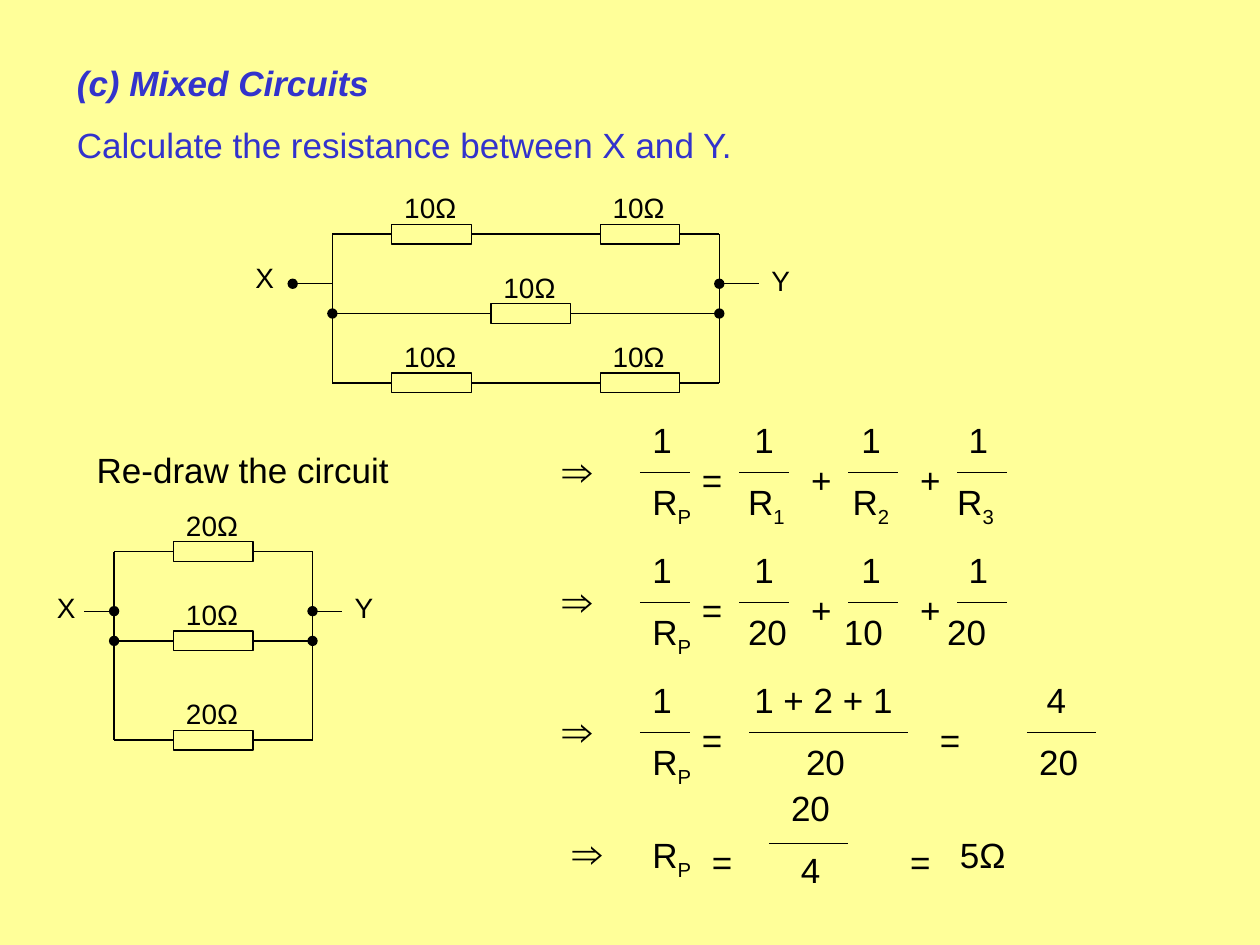
from pptx import Presentation
from pptx.dml.color import RGBColor
from pptx.enum.shapes import MSO_CONNECTOR, MSO_SHAPE
from pptx.enum.text import PP_ALIGN
from pptx.oxml.ns import qn
from pptx.util import Inches, Mm, Pt
from lxml import etree

BOX = MSO_SHAPE.RECTANGLE
LINE = MSO_CONNECTOR.STRAIGHT
MID = PP_ALIGN.CENTER
BLACK = RGBColor(0x00, 0x00, 0x00)
BLUE = RGBColor(0x33, 0x33, 0xCC)
CREAM = RGBColor(0xFF, 0xFF, 0x99)
CELL = Mm(2)
FONT = "Arial"
WIDE = 8


def col(n):
    return int((n + 0.5) * CELL)


def row(n):
    return int((n + 0.6) * CELL)


def add_run(para, text, size, color):
    run = para.add_run()
    run.text = text.lstrip("_")
    run.font.name = FONT
    run.font.size = Pt(size)
    run.font.color.rgb = color
    if text.startswith("_"):
        run._r.get_or_add_rPr().set("baseline", "-25000")
    return run


def add_tabs(para, stops):
    tabs = etree.SubElement(para._p.get_or_add_pPr(), qn("a:tabLst"))
    for stop in stops:
        etree.SubElement(tabs, qn("a:tab"), pos=str(Inches(stop)), algn="l")


def add_text(slide, x, y, width, lines, size=20, color=BLACK, align=None):
    high = 5.5 if len(lines) == 1 else 11.8
    box = slide.shapes.add_textbox(col(x), row(y), int(width * CELL), int(high * CELL))
    frame = box.text_frame
    frame.word_wrap = True
    for i, runs in enumerate(lines):
        para = frame.paragraphs[0] if i == 0 else frame.add_paragraph()
        para.alignment = align
        if i:
            para.space_before = Pt(11.3)
        for text in runs:
            add_run(para, text, size, color)
    return frame


def add_wire(slide, x1, y1, x2, y2, start=None, end=None, dot=None):
    wire = slide.shapes.add_connector(LINE, col(x1), row(y1), col(x2), row(y2))
    if start is not None:
        wire.begin_connect(start, 3)
    if end is not None:
        wire.end_connect(end, 1)
    wire.line.color.rgb = BLACK
    wire.line.width = Pt(0.75)
    if dot:
        etree.SubElement(wire.line._get_or_add_ln(), qn("a:" + dot), type="oval")
    etree.SubElement(wire._element.spPr, qn("a:effectLst"))


def add_load(slide, x, y, label):
    load = slide.shapes.add_shape(BOX, col(x), row(y - 1), WIDE * CELL, 2 * CELL)
    load.shadow.inherit = False
    load.fill.background()
    load.line.color.rgb = BLACK
    load.line.width = Pt(0.75)
    add_text(slide, x, y - 5, 9, [[label]], 16)
    return load


def add_branch(slide, left, right, y, spots, label, dots):
    loads = [add_load(slide, x, y, label) for x in spots]
    starts = [left] + [x + WIDE for x in spots]
    ends = spots + [right]
    for i, (x1, x2) in enumerate(zip(starts, ends)):
        start = loads[i - 1] if i else None
        end = loads[i] if i < len(loads) else None
        dot = None
        if dots:
            dot = "headEnd" if start is None else "tailEnd"
        add_wire(slide, x1, y, x2, y, start, end, dot)


def add_net(slide, left, right, rows):
    for y, spots, label, dots in rows:
        add_branch(slide, left, right, y, spots, label, dots)
    for x in (left, right):
        add_wire(slide, x, rows[0][0], x, rows[-1][0])


def add_sum(slide, y, top, low, top_tabs, low_tabs, signs, bars):
    add_text(slide, 55, y + 2.6, 7.2, [["⇒"]], 24)
    frame = add_text(slide, 64, y, 62, [top, low])
    for para, stops in zip(frame.paragraphs, (top_tabs, low_tabs)):
        add_tabs(para, stops)
    for x, sign in signs:
        add_text(slide, x, y + 4, 7, [[sign]])
    for x1, x2 in bars:
        add_wire(slide, x1, y + 6, x2, y + 6)


def add_result(slide):
    add_text(slide, 56, 82.1, 7.2, [["⇒"]], 24)
    add_text(slide, 64, 82.8, 9, [["R", "_P"]])
    add_text(slide, 77.7, 78.1, 7, [["20"], ["4"]], align=MID)
    add_wire(slide, 77, 84.4, 85, 84.4)
    for x in (70, 90):
        add_text(slide, x, 83.5, 7, [["="]])
    add_text(slide, 95, 82.8, 10, [["5Ω"]])


def add_head(slide):
    frame = add_text(slide, 6, 5, 103, [
        ["(c) Mixed Circuits"],
        ["Calculate the resistance between X and Y."],
    ], color=BLUE)
    font = frame.paragraphs[0].runs[0].font
    font.bold = font.italic = True


def main():
    deck = Presentation()
    deck.slide_width, deck.slide_height = Inches(10), Inches(7.5)
    slide = deck.slides.add_slide(deck.slide_layouts[6])
    slide.background.fill.solid()
    slide.background.fill.fore_color.rgb = CREAM
    add_head(slide)

    add_net(slide, 33, 72, [
        (23, [39, 60], "10Ω", False),
        (31, [49], "10Ω", True),
        (38, [39, 60], "10Ω", False),
    ])
    add_wire(slide, 33, 28, 29, 28, dot="tailEnd")
    add_wire(slide, 72, 28, 76, 28, dot="headEnd")

    add_text(slide, 8, 44, 50, [["Re-draw the circuit"]])
    add_net(slide, 11, 31, [
        (55, [17], "20Ω", False),
        (64, [17], "10Ω", True),
        (74, [17], "20Ω", False),
    ])
    for x1, x2 in ((11, 8), (31, 34)):
        add_wire(slide, x1, 61, x2, 61, dot="headEnd")

    for x, y, name in ((24, 25, "X"), (76, 25.3, "Y"), (4, 58.3, "X"), (34, 58.3, "Y")):
        add_text(slide, x, y, 5, [[name]], 16)

    ones = ["1\t1\t1\t1"]
    stops = (0.81, 1.66, 2.51)
    signs = ((69, "="), (80, "+"), (91, "+"))
    bars = ((64, 69), (74, 79), (85, 90), (96, 101))
    names = ["R", "_P", "\tR", "_1", "\tR", "_2", "\tR", "_3"]
    first, step = 41, 13.1
    add_sum(slide, first, ones, names, stops, (0.76, 1.59, 2.42), signs, bars)
    add_sum(slide, first + step, ones, ["R", "_P", "\t20\t10\t20"],
            stops, (0.76, 1.52, 2.34), signs, bars)
    add_sum(slide, first + 2 * step, ["1\t1 + 2 + 1\t4"], ["R", "_P", "\t20\t20"],
            (0.81, 3.13), (1.22, 3.07), ((69, "="), (93, "=")),
            ((64, 69), (75, 91), (103, 110)))
    add_result(slide)
    deck.save("out.pptx")


if __name__ == "__main__":
    main()
